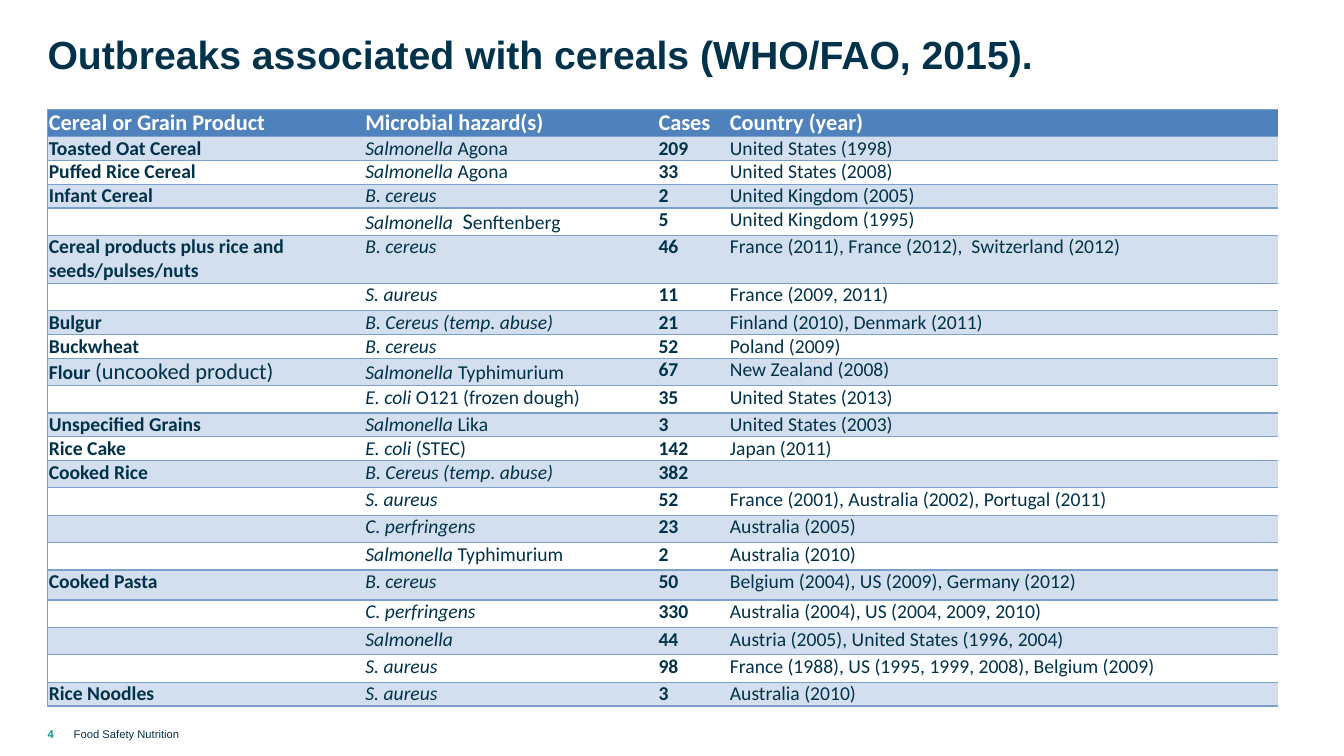
import pptx
import pptx.util
import pptx.dml.color
import pptx.enum.text
from lxml import etree

Cm = pptx.util.Cm
Pt = pptx.util.Pt
RGB = pptx.dml.color.RGBColor.from_string
ANCHOR = pptx.enum.text.MSO_ANCHOR
A = "http://schemas.openxmlformats.org/drawingml/2006/main"
COLORS = {"navy": "00324B", "teal": "009B91", "white": "FFFFFF",
          "header": "4F81BD", "band": "D3DFEE", "border": "7BA0CD"}

# *...* is italic, ^...^ is 16 pt regular
OUTBREAKS = [
    ("Cereal or Grain Product", "Microbial hazard(s)", "Cases", "Country (year)"),
    ("Toasted Oat Cereal", "*Salmonella *Agona", "209", "United States (1998)"),
    ("Puffed Rice Cereal", "*Salmonella *Agona", "33", "United States (2008)"),
    ("Infant Cereal", "*B. cereus*", "2", "United Kingdom (2005)"),
    ("", "*Salmonella *^ S^enftenberg", "5", "United Kingdom (1995)"),
    ("Cereal products plus rice and seeds/pulses/nuts", "*B. cereus*", "46",
     "France (2011), France (2012),  Switzerland (2012)"),
    ("", "*S. aureus*", "11", "France (2009, 2011)"),
    ("Bulgur", "*B. Cereus (temp. abuse)*", "21", "Finland (2010), Denmark (2011)"),
    ("Buckwheat", "*B. cereus*", "52", "Poland (2009)"),
    ("Flour ^(uncooked product)^", "*Salmonella*^ ^Typhimurium", "67", "New Zealand (2008)"),
    ("", "*E. coli *O121 (frozen dough)", "35", "United States (2013)"),
    ("Unspecified Grains", "*Salmonella *Lika", "3", "United States (2003)"),
    ("Rice Cake", "*E. coli *(STEC)", "142", "Japan (2011)"),
    ("Cooked Rice", "*B. Cereus (temp. abuse)*", "382", ""),
    ("", "*S. aureus*", "52", "France (2001), Australia (2002), Portugal (2011)"),
    ("", "*C. perfringens*", "23", "Australia (2005)"),
    ("", "*Salmonella *Typhimurium", "2", "Australia (2010)"),
    ("Cooked Pasta", "*B. cereus*", "50", "Belgium (2004), US (2009), Germany (2012)"),
    ("", "*C. perfringens*", "330", "Australia (2004), US (2004, 2009, 2010)"),
    ("", "*Salmonella*", "44", "Austria (2005), United States (1996, 2004)"),
    ("", "*S. aureus*", "98", "France (1988), US (1995, 1999, 2008), Belgium (2009)"),
    ("Rice Noodles", "*S. aureus*", "3", "Australia (2010)"),
]
COLUMN_WIDTHS = [7.98, 7.39, 1.8, 13.84]
SPECIAL_HEIGHTS = {"Cereal products plus rice and seeds/pulses/nuts": 1.21,
                   "Cooked Pasta": 0.76}


def add_text(text, left, top, width, height, size, color, bold, anchor):
    sp = slide.shapes.add_textbox(Cm(left), Cm(top), Cm(width), Cm(height))
    tf = sp.text_frame
    tf.word_wrap = True
    tf.vertical_anchor = anchor
    tf.margin_left = tf.margin_right = tf.margin_top = tf.margin_bottom = 0
    p = tf.paragraphs[0]
    p.text = text
    p.font.name = "Arial"
    p.font.size = Pt(size)
    p.font.bold = bold
    p.font.color.rgb = RGB(COLORS[color])


def add_border(cell, side):
    ln = etree.SubElement(cell._tc.get_or_add_tcPr(), f"{{{A}}}ln{side}", w="12700")
    fill = etree.SubElement(ln, f"{{{A}}}solidFill")
    etree.SubElement(fill, f"{{{A}}}srgbClr", val=COLORS["border"])


prs = pptx.Presentation()
prs.slide_width = Cm(33.88)
prs.slide_height = Cm(19.05)
slide = prs.slides.add_slide(prs.slide_layouts[6])

add_text("Outbreaks associated with cereals (WHO/FAO, 2015).",
         1.2, 0.76, 31, 1.8, 28, "navy", True, ANCHOR.TOP)

heights = []
for i, row in enumerate(OUTBREAKS):
    tall = i == 0 or "" in row or "^" in "".join(row)
    heights.append(SPECIAL_HEIGHTS.get(row[0], 0.69 if tall else 0.6))

frame = slide.shapes.add_table(len(OUTBREAKS), len(COLUMN_WIDTHS), Cm(1.2), Cm(2.75),
                               Cm(sum(COLUMN_WIDTHS)), Cm(sum(heights)))
table = frame.table
table.horz_banding = False
table._tbl.tblPr.find(f"{{{A}}}tableStyleId").text = "{2D5ABB26-0587-4C30-8999-92F81FD0307C}"
for column, width in zip(table.columns, COLUMN_WIDTHS):
    column.width = Cm(width)

for i, row in enumerate(OUTBREAKS):
    table.rows[i].height = Cm(heights[i])
    for j, text in enumerate(row):
        cell = table.cell(i, j)
        cell.margin_left = cell.margin_right = Cm(0.03)
        cell.margin_top = cell.margin_bottom = 0
        for side in "LTB" if j == 0 else "TB":
            add_border(cell, side)
        if i % 2 or i == 0:
            cell.fill.solid()
            cell.fill.fore_color.rgb = RGB(COLORS["band" if i else "header"])
        else:
            cell.fill.background()
        p = cell.text_frame.paragraphs[0]
        if not text:
            p._p.get_or_add_endParaRPr().set("sz", "1600")
            continue
        p.font.name = "Calibri"
        p.font.size = Pt(14 if i else 16)
        p.font.bold = i == 0 or j in (0, 2)
        p.font.color.rgb = RGB(COLORS["navy" if i else "white"])
        for m, part in enumerate(text.split("*")):
            for n, piece in enumerate(part.split("^")):
                if piece:
                    r = p.add_run()
                    r.text = piece
                    if m % 2:
                        r.font.italic = True
                    if n % 2:
                        r.font.size = Pt(16)
                        r.font.bold = False

add_text("4", 1.2, 18.24, 0.6, 0.5, 8, "teal", True, ANCHOR.MIDDLE)
add_text("Food Safety Nutrition", 1.86, 18.24, 22, 0.5, 8, "navy", False, ANCHOR.MIDDLE)

prs.save("out.pptx")
